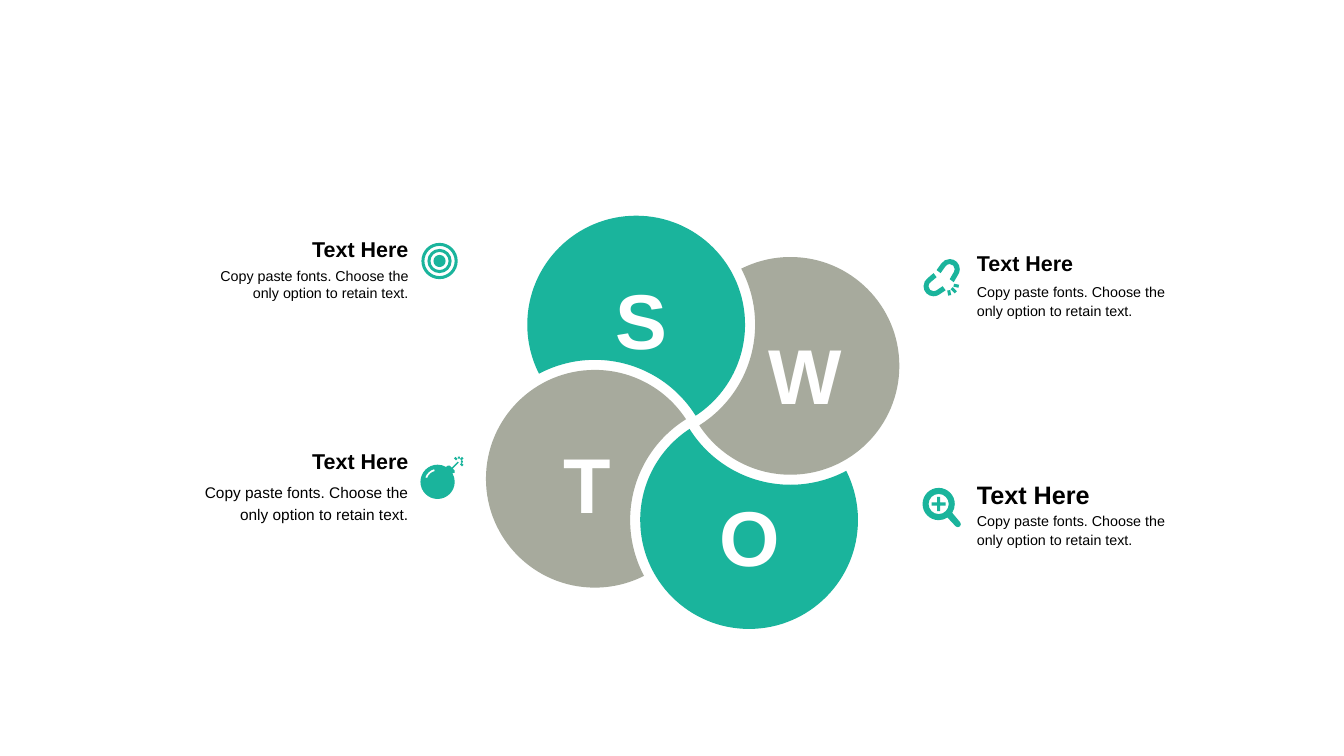
from math import acos, atan2, ceil, cos, degrees, dist, floor, radians, sin, tan

from lxml.etree import Element
from pptx import Presentation
from pptx.dml.color import RGBColor
from pptx.enum.text import PP_ALIGN as Align
from pptx.oxml.ns import qn
from pptx.util import Inches, Pt

TEAL = RGBColor(0x1A, 0xB4, 0x9C)
GREY = RGBColor(0xA7, 0xAA, 0x9D)
WHITE = RGBColor(0xFF, 0xFF, 0xFF)
BLACK = RGBColor(0, 0, 0)

HEADING = "Text Here"
BODY = "Copy paste fonts. Choose the only option to retain text."
NOTE_WIDTH, HEADING_HEIGHT = 2.27, 0.31
NOTES = [
    dict(left=1.88, top=2.29, heading=15.3, body=10.2, height=0.45, spacing=None, align=Align.RIGHT),
    dict(left=1.88, top=4.4, heading=15.3, body=11, height=0.58, spacing=1.2, align=Align.RIGHT),
    dict(left=9.59, top=4.71, heading=18, body=10.2, height=0.48, spacing=1.1, align=Align.LEFT),
    dict(left=9.59, top=2.43, heading=15.3, body=10.2, height=0.49, spacing=1.1, align=Align.LEFT),
]

PINWHEEL_CENTER = (6.87, 4.19)
FIRST_PETAL_OFFSET = (-0.56, -0.97)
PETAL_RADIUS, CUT_RADIUS = 1.08, 1.18
LETTER_HEIGHT = 0.93
PETALS = [
    ("S", TEAL, 6.01, 2.65, 0.64, Align.LEFT),
    ("W", GREY, 7.52, 3.19, 0.84, Align.CENTER),
    ("O", TEAL, 7.04, 4.8, 0.72, Align.CENTER),
    ("T", GREY, 5.49, 4.27, 0.6, Align.CENTER),
]

TARGET_CENTER = (4.36, 2.59)
TARGET_RADII = [0.18, 0.15, 0.12, 0.09, 0.06]

BOMB_CENTER = (4.34, 4.78)
BOMB_CAP = [(4.44, 4.62), (4.46, 4.62), (4.48, 4.64), (4.54, 4.58), (4.55, 4.59),
            (4.49, 4.65), (4.51, 4.67), (4.51, 4.69)]
BOMB_SPARKS = [
    ((4.51, 4.54), (4.53, 4.56)),
    ((4.57, 4.6), (4.59, 4.62)),
    ((4.57, 4.58), (4.59, 4.58)),
    ((4.55, 4.53), (4.55, 4.55)),
    ((4.59, 4.54), (4.57, 4.56)),
]

LENS_CENTER = (9.31, 5)
HANDLE_END = (9.5, 5.2)
PLUS_ARM, PLUS_WIDTH = 0.07, 0.03

LOWER_LINK = (9.26, 2.84)
UPPER_LINK = (9.42, 2.67)
CHAIN_SPARKS = [
    ((9.41, 2.88), (9.42, 2.93)),
    ((9.46, 2.83), (9.51, 2.84)),
    ((9.44, 2.86), (9.48, 2.9)),
]


def lines(*points):
    return [(point,) for point in points]


def arc(center, radius, start, end):
    low, high = sorted((start, end))
    quarters = range(floor(low / 90) + 1, ceil(high / 90))
    stops = sorted([low, high] + [90 * q for q in quarters], reverse=end < start)

    def place(angle, tangent=0):
        a = radians(angle)
        return (center[0] + radius * (cos(a) - tangent * sin(a)),
                center[1] + radius * (sin(a) + tangent * cos(a)))

    segments = lines(place(start))
    for a, b in zip(stops, stops[1:]):
        pull = 4 / 3 * tan(radians(b - a) / 4)
        segments.append((place(a, pull), place(b, -pull), place(b)))
    return segments


def circle(center, radius):
    return arc(center, radius, 0, 360)


def bar(start, end, width):
    scale = width / 2 / dist(start, end)
    x, y = (start[1] - end[1]) * scale, (end[0] - start[0]) * scale
    return lines((start[0] + x, start[1] + y), (end[0] + x, end[1] + y),
                 (end[0] - x, end[1] - y), (start[0] - x, start[1] - y))


def plus_outline(center, arm, half):
    corners = [(half, -arm), (half, -half), (arm, -half)]
    points = []
    for _ in range(4):
        points += [(center[0] + x, center[1] + y) for x, y in corners]
        corners = [(-y, x) for x, y in corners]
    return lines(*points)


def quarter_turns(offset, count):
    x, y = offset
    for _ in range(count % 4):
        x, y = -y, x
    return PINWHEEL_CENTER[0] + x, PINWHEEL_CENTER[1] + y


def petal_outline(index):
    center = quarter_turns(FIRST_PETAL_OFFSET, index)
    neighbour = quarter_turns(FIRST_PETAL_OFFSET, index + 3)
    gap = dist(center, neighbour)
    toward = degrees(atan2(neighbour[1] - center[1], neighbour[0] - center[0]))
    outer = degrees(acos((gap**2 + PETAL_RADIUS**2 - CUT_RADIUS**2) / (2 * gap * PETAL_RADIUS)))
    inner = degrees(acos((gap**2 + CUT_RADIUS**2 - PETAL_RADIUS**2) / (2 * gap * CUT_RADIUS)))
    return (arc(center, PETAL_RADIUS, toward + outer, toward + 360 - outer)
            + arc(neighbour, CUT_RADIUS, toward + 180 + inner, toward + 180 - inner))


def add_outlines(slide, outlines, color):
    ends = [[tuple(map(Inches, segment[-1])) for segment in outline] for outline in outlines]
    builder = slide.shapes.build_freeform(*ends[0][0])
    for index, points in enumerate(ends):
        if index:
            builder.move_to(*points[0])
        builder.add_line_segments(points[1:], close=True)
    shape = builder.convert_to_shape()
    segments = [segment for outline in outlines for segment in outline[1:]]
    for node, segment in zip(list(shape.element.iter(qn("a:lnTo"))), segments):
        if len(segment) == 3:
            node.tag = qn("a:cubicBezTo")
            for position, (x, y) in enumerate(segment[:2]):
                node.insert(position, Element(qn("a:pt"), x=str(Inches(x) - shape.left),
                                              y=str(Inches(y) - shape.top)))
    shape.shadow.inherit = False
    shape.fill.solid()
    shape.fill.fore_color.rgb = color
    shape.line.fill.background()


def add_text(slide, text, *, box, size, color=BLACK, bold=False, align=Align.LEFT,
             spacing=None, wrap=True):
    frame = slide.shapes.add_textbox(*map(Inches, box)).text_frame
    frame.word_wrap = wrap
    paragraph = frame.paragraphs[0]
    paragraph.alignment = align
    paragraph.line_spacing = spacing
    run = paragraph.add_run()
    run.text = text
    run.font.name = "Arial"
    run.font.size = Pt(size)
    run.font.bold = bold
    run.font.color.rgb = color


def icon_outlines():
    target = [circle(TARGET_CENTER, radius) for radius in TARGET_RADII]
    bomb = [
        arc(BOMB_CENTER, 0.17, -30, 300) + lines(*BOMB_CAP),
        arc(BOMB_CENTER, 0.13, 200, 255) + arc(BOMB_CENTER, 0.11, 255, 200),
    ] + [bar(start, end, 0.02) for start, end in BOMB_SPARKS]
    magnifier = [
        arc(LENS_CENTER, 0.16, 57, 393) + arc(HANDLE_END, 0.03, -45, 135),
        circle(LENS_CENTER, 0.1),
        plus_outline(LENS_CENTER, PLUS_ARM, PLUS_WIDTH / 2),
    ]
    chain = [
        lines((9.38, 2.88)) + arc(LOWER_LINK, 0.1, 57, 237) + lines((9.26, 2.71), (9.29, 2.75))
        + arc(LOWER_LINK, 0.05, 237, 57) + lines((9.35, 2.84)),
        lines((9.46, 2.8)) + arc(UPPER_LINK, 0.1, 33, -147) + lines((9.29, 2.68), (9.33, 2.71))
        + arc(UPPER_LINK, 0.05, -147, 33) + lines((9.42, 2.77)),
    ] + [bar(start, end, 0.03) for start, end in CHAIN_SPARKS]
    return [target, bomb, magnifier, chain]


def main():
    presentation = Presentation()
    presentation.slide_width, presentation.slide_height = Inches(13.33), Inches(7.5)
    slide = presentation.slides.add_slide(presentation.slide_layouts[6])
    for note in NOTES:
        left, top = note["left"], note["top"]
        add_text(slide, HEADING, box=(left, top, NOTE_WIDTH, HEADING_HEIGHT),
                 size=note["heading"], bold=True, align=note["align"])
        add_text(slide, BODY, box=(left, top + HEADING_HEIGHT, NOTE_WIDTH, note["height"]),
                 size=note["body"], align=note["align"], spacing=note["spacing"])
    for index, (letter, color, left, top, width, align) in enumerate(PETALS):
        add_outlines(slide, [petal_outline(index)], color)
        add_text(slide, letter, box=(left, top, width, LETTER_HEIGHT), size=55.5,
                 color=WHITE, bold=True, align=align, wrap=False)
    for outlines in icon_outlines():
        add_outlines(slide, outlines, TEAL)
    presentation.save("out.pptx")


if __name__ == "__main__":
    main()
